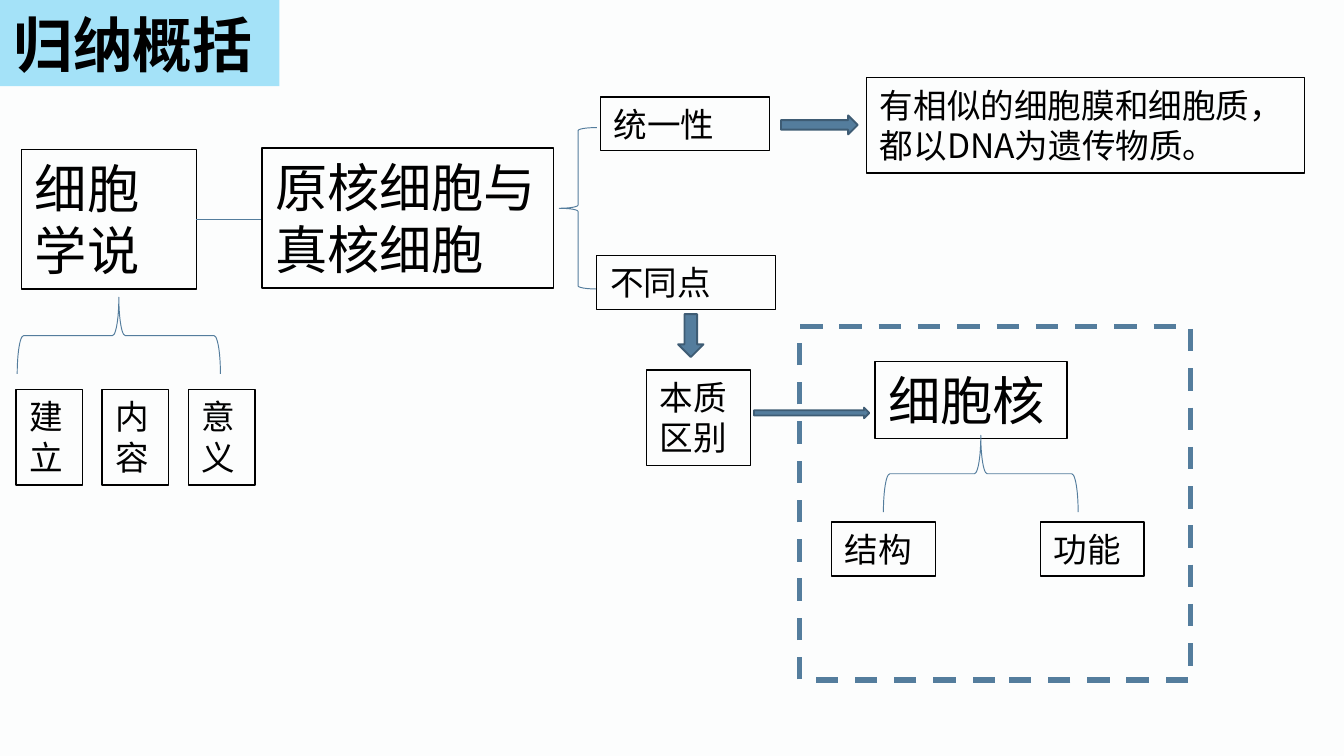
from lxml import etree
from pptx import Presentation
from pptx.dml.color import RGBColor
from pptx.enum.dml import MSO_LINE
from pptx.enum.shapes import MSO_CONNECTOR, MSO_SHAPE
from pptx.enum.text import MSO_ANCHOR, MSO_AUTO_SIZE, PP_ALIGN
from pptx.oxml.ns import qn
from pptx.util import Cm, Pt

RECT, BRACE, ARROW = MSO_SHAPE.RECTANGLE, MSO_SHAPE.LEFT_BRACE, MSO_SHAPE.RIGHT_ARROW
STRAIGHT, DASH = MSO_CONNECTOR.STRAIGHT, MSO_LINE.DASH
TOP, MIDDLE, LEFT = MSO_ANCHOR.TOP, MSO_ANCHOR.MIDDLE, PP_ALIGN.LEFT
NO_FIT = MSO_AUTO_SIZE.NONE
TITLE_ONLY = 5
FONT = "Noto Sans CJK SC"
LARGE, SMALL = 28, 18
COLOURS = {"page": "FCFDFD", "title": "00B0F0", "ink": "000000",
           "accent": "547D9D", "edge": "3E5C74"}


def colour(key):
    return RGBColor.from_string(COLOURS[key])


class ConceptMap:
    """Holds the style and the current slide; lengths are in centimetres."""

    def __init__(self, slide):
        self.slide = slide
        slide.background.fill.solid()
        slide.background.fill.fore_color.rgb = colour("page")

    def format_line(self, line, key, width, dash=None):
        line.color.rgb = colour(key)
        for name, value in {"width": Pt(width), "dash_style": dash}.items():
            setattr(line, name, value)

    def set_text(self, shape, text, size, bold=False, anchor=TOP):
        frame = shape.text_frame
        frame.text = text
        for name, value in {"word_wrap": True, "auto_size": NO_FIT,
                            "vertical_anchor": anchor}.items():
            setattr(frame, name, value)
        for paragraph in frame.paragraphs:
            for name, value in {"alignment": LEFT, "line_spacing": Pt(size * 1.2)}.items():
                setattr(paragraph, name, value)
            for run in paragraph.runs:
                run.font.color.rgb = colour("ink")
                for name, value in {"name": FONT, "size": Pt(size), "bold": bold}.items():
                    setattr(run.font, name, value)
                east_asian = etree.SubElement(run.font._element, qn("a:ea"))
                east_asian.set("typeface", FONT)

    def title(self, text, left, top, width, height):
        heading = self.slide.shapes.title
        for name, value in {"left": left, "top": top, "width": width,
                            "height": height}.items():
            setattr(heading, name, Cm(value))
        heading.fill.solid()
        heading.fill.fore_color.rgb = colour("title")
        tint = heading._element.spPr.find(".//" + qn("a:srgbClr"))
        etree.SubElement(tint, qn("a:alpha")).set("val", "35000")
        self.set_text(heading, text, 32, bold=True, anchor=MIDDLE)

    def shape(self, kind, place, rotation=0):
        item = self.slide.shapes.add_shape(kind, *map(Cm, place))
        item.shadow.inherit = False
        item.rotation = rotation
        item.fill.background()
        return item

    def box(self, text, size, *place):
        item = self.shape(RECT, place)
        self.format_line(item.line, "ink", 0.75)
        self.set_text(item, text, size)

    def brace(self, *place, rotation=0):
        self.format_line(self.shape(BRACE, place, rotation).line, "accent", 0.5)

    def arrow(self, *place, rotation=0):
        item = self.shape(ARROW, place, rotation)
        item.fill.solid()
        item.fill.fore_color.rgb = colour("accent")
        self.format_line(item.line, "edge", 1)

    def dashed_frame(self, *place):
        self.format_line(self.shape(RECT, place).line, "accent", 3, DASH)

    def link(self, *ends):
        item = self.slide.shapes.add_connector(STRAIGHT, *map(Cm, ends))
        self.format_line(item.line, "accent", 0.5)
        etree.SubElement(item._element.spPr, qn("a:effectLst"))


def main():
    deck = Presentation()
    deck.slide_width, deck.slide_height = Cm(25.4), Cm(14.28)
    concept = ConceptMap(deck.slides.add_slide(deck.slide_layouts[TITLE_ONLY]))
    concept.title("归纳概括", 0, 0, 5.28, 1.63)

    # Cell theory and its three aspects
    concept.box("细胞\n学说", LARGE, 0.41, 2.82, 3.3, 2.64)
    concept.brace(1.52, 4.42, 1.45, 3.84, rotation=90)
    for column, aspect in enumerate(["建\n立", "内\n容", "意义"]):
        concept.box(aspect, SMALL, 0.3 + 1.63 * column, 7.36, 1.26, 1.8)

    # Prokaryotic and eukaryotic cells
    concept.link(3.7, 4.14, 4.95, 4.14)
    concept.box("原核细胞与真核细胞", LARGE, 4.95, 2.8, 5.51, 2.64)
    concept.brace(10.57, 2.41, 0.71, 3.05)

    # Unity
    concept.box("统一性", SMALL, 11.35, 1.83, 3.2, 1.02)
    concept.arrow(14.76, 2.18, 1.45, 0.36)
    concept.box("有相似的细胞膜和细胞质，都以DNA为遗传物质。", SMALL, 16.38, 1.47, 8.28, 1.8)

    # Differences
    concept.box("不同点", SMALL, 11.28, 4.83, 3.38, 1.02)
    concept.arrow(12.65, 6.1, 0.81, 0.48, rotation=90)
    concept.box("本质区别", SMALL, 12.22, 6.99, 1.96, 1.8)

    # Nucleus with structure and function
    concept.dashed_frame(15.11, 6.17, 7.39, 6.68)
    concept.arrow(14.25, 7.7, 2.18, 0.2)
    concept.box("细胞核", LARGE, 16.54, 6.83, 3.63, 1.45)
    concept.brace(17.81, 7.11, 1.45, 3.68, rotation=90)
    for left, topic in [(15.72, "结构"), (19.66, "功能")]:
        concept.box(topic, SMALL, left, 9.86, 1.96, 1.02)

    deck.save("out.pptx")


if __name__ == "__main__":
    main()
